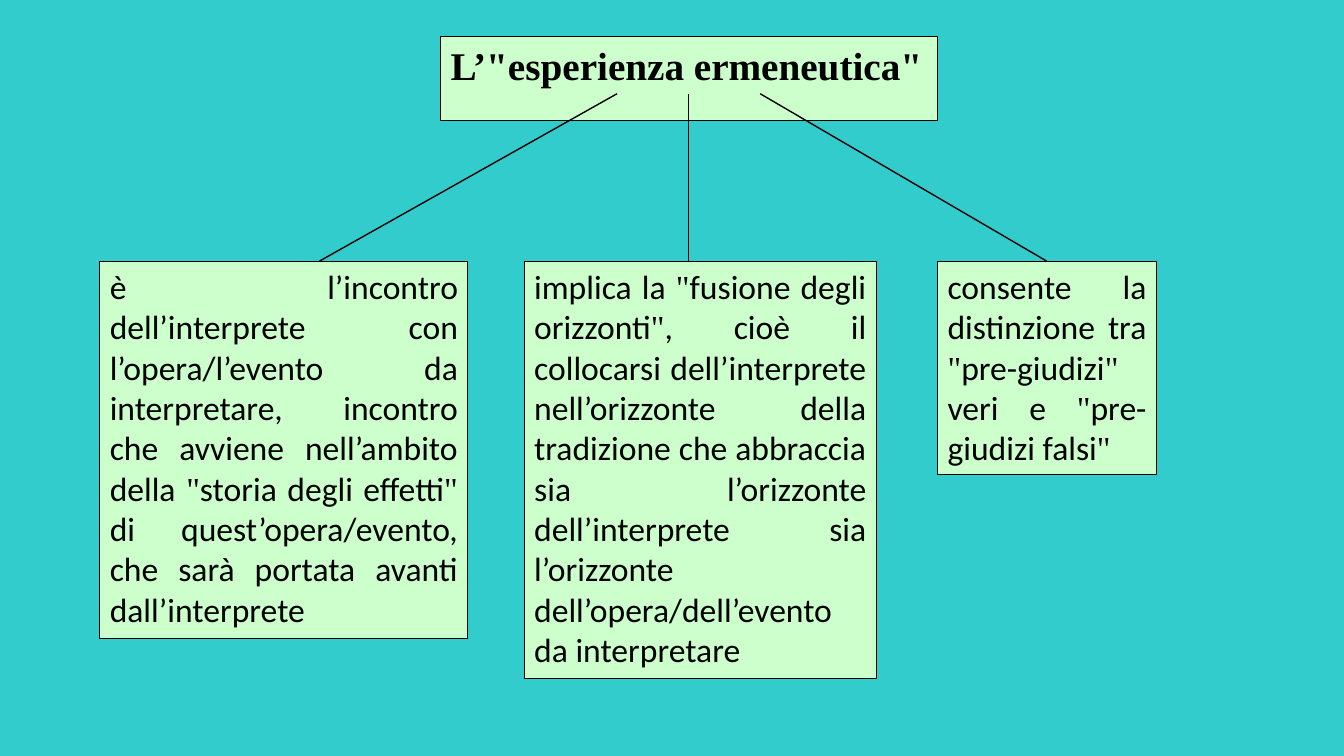
from pptx import Presentation
from pptx.dml.color import RGBColor
from pptx.enum.shapes import MSO_CONNECTOR
from pptx.enum.text import MSO_ANCHOR, MSO_AUTO_SIZE, PP_ALIGN
from pptx.oxml.ns import qn
from pptx.util import Inches, Pt
from lxml import etree

# Content
TITLE = 'L’"esperienza ermeneutica"'
# text, left, width, height
BRANCHES = [
    ('è l’incontro dell’interprete con l’opera/l’evento da interpretare, '
     'incontro che avviene nell’ambito della "storia degli effetti" di '
     'quest’opera/evento, che sarà portata avanti dall’interprete',
     0.99, 3.65, 3.74),
    ('implica la "fusione degli orizzonti", cioè il collocarsi '
     'dell’interprete nell’orizzonte della tradizione che abbraccia sia '
     'l’orizzonte dell’interprete sia l’orizzonte dell’opera/dell’evento '
     'da interpretare',
     5.2, 3.49, 4.14),
    ('consente la distinzione tra "pre-giudizi" veri e "pre-giudizi falsi"',
     9.3, 2.17, 2.12),
]

# Layout and style
TITLE_LEFT, TITLE_TOP, TITLE_WIDTH, TITLE_HEIGHT = 4.37, 0.36, 4.93, 0.57
BRANCH_TOP = 2.59
LINE_STARTS = [6.12, 6.83, 7.54]
LINE_ENDS = [3.17, 6.83, 10.38]
TURQUOISE = RGBColor(0x33, 0xCC, 0xCC)
PALE_GREEN = RGBColor(0xCC, 0xFF, 0xCC)
BLACK = RGBColor(0, 0, 0)
SERIF, SANS = "Times New Roman", "Calibri"


def style_box(shape, size, alignment):
    """Give a text shape its outline, fill and paragraph format."""
    shape.fill.solid()
    shape.fill.fore_color.rgb = PALE_GREEN
    shape.line.color.rgb = BLACK
    shape.line.width = Pt(0.75)
    frame = shape.text_frame
    frame.word_wrap = True
    frame.auto_size = MSO_AUTO_SIZE.SHAPE_TO_FIT_TEXT
    frame.vertical_anchor = MSO_ANCHOR.TOP
    paragraph = frame.paragraphs[0]
    paragraph.alignment = alignment
    paragraph.font.size = Pt(size)
    paragraph.font.color.rgb = BLACK
    return paragraph


def add_quoted_text(paragraph, text):
    """Write the text in sans, with its quotation marks in serif."""
    for index, part in enumerate(text.split('"')):
        pieces = [(part, SANS)] if index == 0 else [('"', SERIF), (part, SANS)]
        for piece, font_name in pieces:
            if piece:
                run = paragraph.add_run()
                run.text = piece
                run.font.name = font_name


presentation = Presentation()
presentation.slide_width = Inches(13.33)
presentation.slide_height = Inches(7.5)
slide = presentation.slides.add_slide(presentation.slide_layouts[5])
slide.background.fill.solid()
slide.background.fill.fore_color.rgb = TURQUOISE

# Title
title = slide.shapes.title
title.left, title.top = Inches(TITLE_LEFT), Inches(TITLE_TOP)
title.width, title.height = Inches(TITLE_WIDTH), Inches(TITLE_HEIGHT)
title.text_frame.text = TITLE
title_paragraph = style_box(title, 28, PP_ALIGN.LEFT)
title_paragraph.font.name = SERIF
title_paragraph.font.bold = True

# Branch boxes
for text, left, width, height in BRANCHES:
    box = slide.shapes.add_textbox(
        Inches(left), Inches(BRANCH_TOP), Inches(width), Inches(height))
    add_quoted_text(style_box(box, 24, PP_ALIGN.JUSTIFY), text)

# Lines from the title to the branches
for start, end in zip(LINE_STARTS, LINE_ENDS):
    connector = slide.shapes.add_connector(
        MSO_CONNECTOR.STRAIGHT,
        Inches(start), Inches(TITLE_TOP + TITLE_HEIGHT),
        Inches(end), Inches(BRANCH_TOP))
    connector.line.color.rgb = BLACK
    connector.line.width = Pt(1)
    etree.SubElement(connector._element.spPr, qn("a:effectLst"))

presentation.save("out.pptx")
